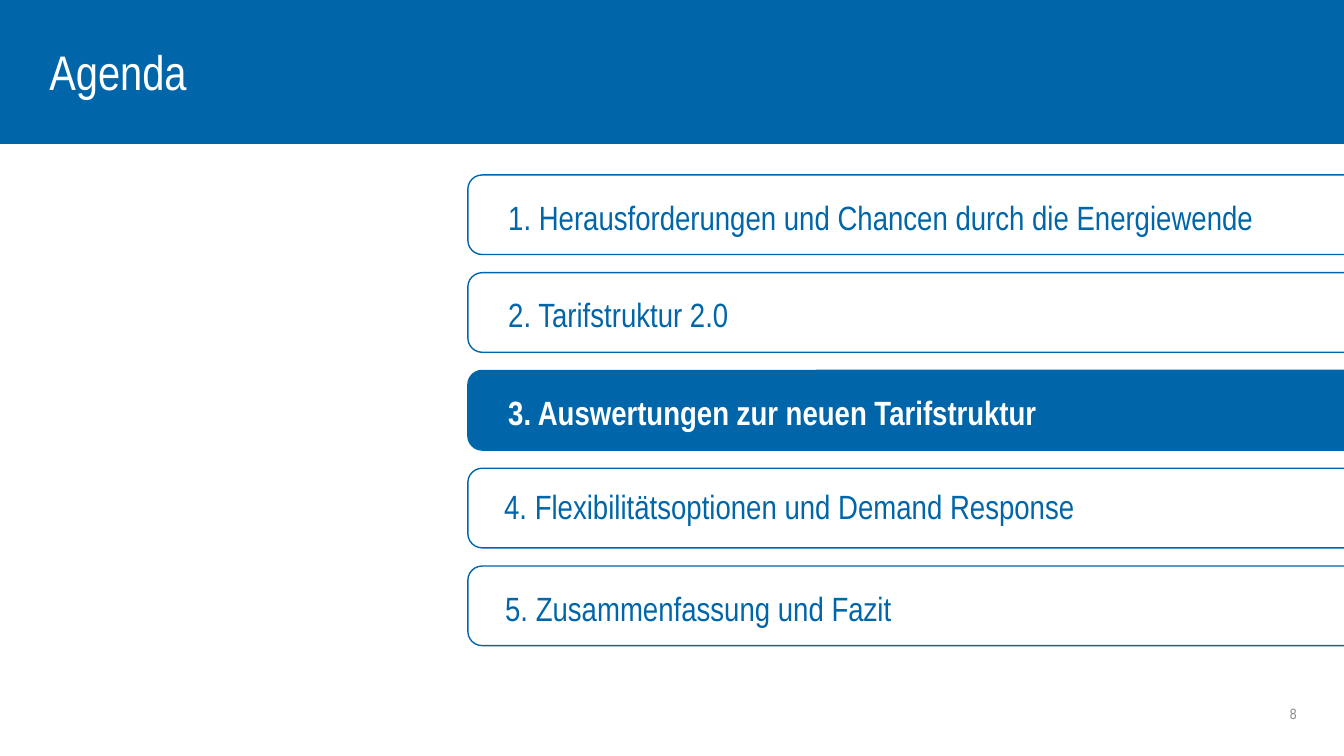
from pptx import Presentation
from pptx.dml.color import RGBColor
from pptx.enum.shapes import MSO_SHAPE
from pptx.enum.text import MSO_ANCHOR, PP_ALIGN
from pptx.util import Inches, Pt

RECTANGLE = MSO_SHAPE.RECTANGLE
TAB_SHAPE = MSO_SHAPE.ROUND_2_SAME_RECTANGLE
MIDDLE = MSO_ANCHOR.MIDDLE
LEFT, RIGHT = PP_ALIGN.LEFT, PP_ALIGN.RIGHT

FONT = "Arial Narrow"
BLUE, WHITE, GRAY = "0066A9", "FFFFFF", "87888A"

TAB_CENTER_X, TAB_LENGTH, TAB_HEIGHT = 9.0, 8.72, 0.79
FIRST_TAB_Y, TAB_PITCH = 2.13, 0.97
LABEL_WIDTH, LABEL_HEIGHT = 7.82, 0.55
CURRENT_TOPIC = 2

# Topic, left edge of its label, vertical centre of its label
AGENDA = [
    ("1. Herausforderungen und Chancen durch die Energiewende", 5.04, 2.15),
    ("2. Tarifstruktur 2.0", 5.04, 3.12),
    ("3. Auswertungen zur neuen Tarifstruktur", 5.04, 4.09),
    ("4. Flexibilitätsoptionen und Demand Response", 5.0, 5.02),
    ("5. Zusammenfassung und Fazit", 5.01, 6.03),
]


def color(hex_value):
    return RGBColor.from_string(hex_value)


def add_outlined_shape(slide, kind, left, top, width, height, filled):
    shape = slide.shapes.add_shape(
        kind, Inches(left), Inches(top), Inches(width), Inches(height))
    shape.shadow.inherit = False
    if filled:
        shape.fill.solid()
        shape.fill.fore_color.rgb = color(BLUE)
    else:
        shape.fill.background()
    shape.line.color.rgb = color(BLUE)
    shape.line.width = Pt(1)
    return shape


def add_text(slide, text, left, top, width, height, size, hex_value,
             bold=False, align=LEFT):
    box = slide.shapes.add_textbox(
        Inches(left), Inches(top), Inches(width), Inches(height))
    frame = box.text_frame
    frame.word_wrap = True
    frame.vertical_anchor = MIDDLE
    frame.margin_left = frame.margin_right = 0
    frame.margin_top = frame.margin_bottom = 0
    paragraph = frame.paragraphs[0]
    paragraph.alignment = align
    run = paragraph.add_run()
    run.text = text
    run.font.name = FONT
    run.font.size = Pt(size)
    run.font.bold = bold
    run.font.color.rgb = color(hex_value)


def add_tab(slide, center_y, filled):
    """Add an upright tab turned so that its round corners face left."""
    tab = add_outlined_shape(
        slide, TAB_SHAPE, TAB_CENTER_X - TAB_HEIGHT / 2,
        center_y - TAB_LENGTH / 2, TAB_HEIGHT, TAB_LENGTH, filled)
    tab.adjustments[0] = 0.18
    tab.adjustments[1] = 0
    tab.rotation = 270


def add_agenda(slide):
    for index, (topic, label_left, label_y) in enumerate(AGENDA):
        current = index == CURRENT_TOPIC
        add_tab(slide, FIRST_TAB_Y + index * TAB_PITCH, current)
        add_text(slide, topic, label_left, label_y - LABEL_HEIGHT / 2,
                 LABEL_WIDTH, LABEL_HEIGHT, 24,
                 WHITE if current else BLUE, bold=current)


def main():
    prs = Presentation()
    prs.slide_width, prs.slide_height = Inches(13.33), Inches(7.5)
    slide = prs.slides.add_slide(prs.slide_layouts[6])

    add_outlined_shape(slide, RECTANGLE, 0, 0, 13.33, 1.42, filled=True)
    add_text(slide, "Agenda", 0.49, 0.44, 9.67, 0.52, 34.7, WHITE)
    add_agenda(slide)
    add_text(slide, "8", 11.29, 6.95, 1.57, 0.26, 10.7, GRAY, align=RIGHT)

    prs.save("out.pptx")


if __name__ == "__main__":
    main()
